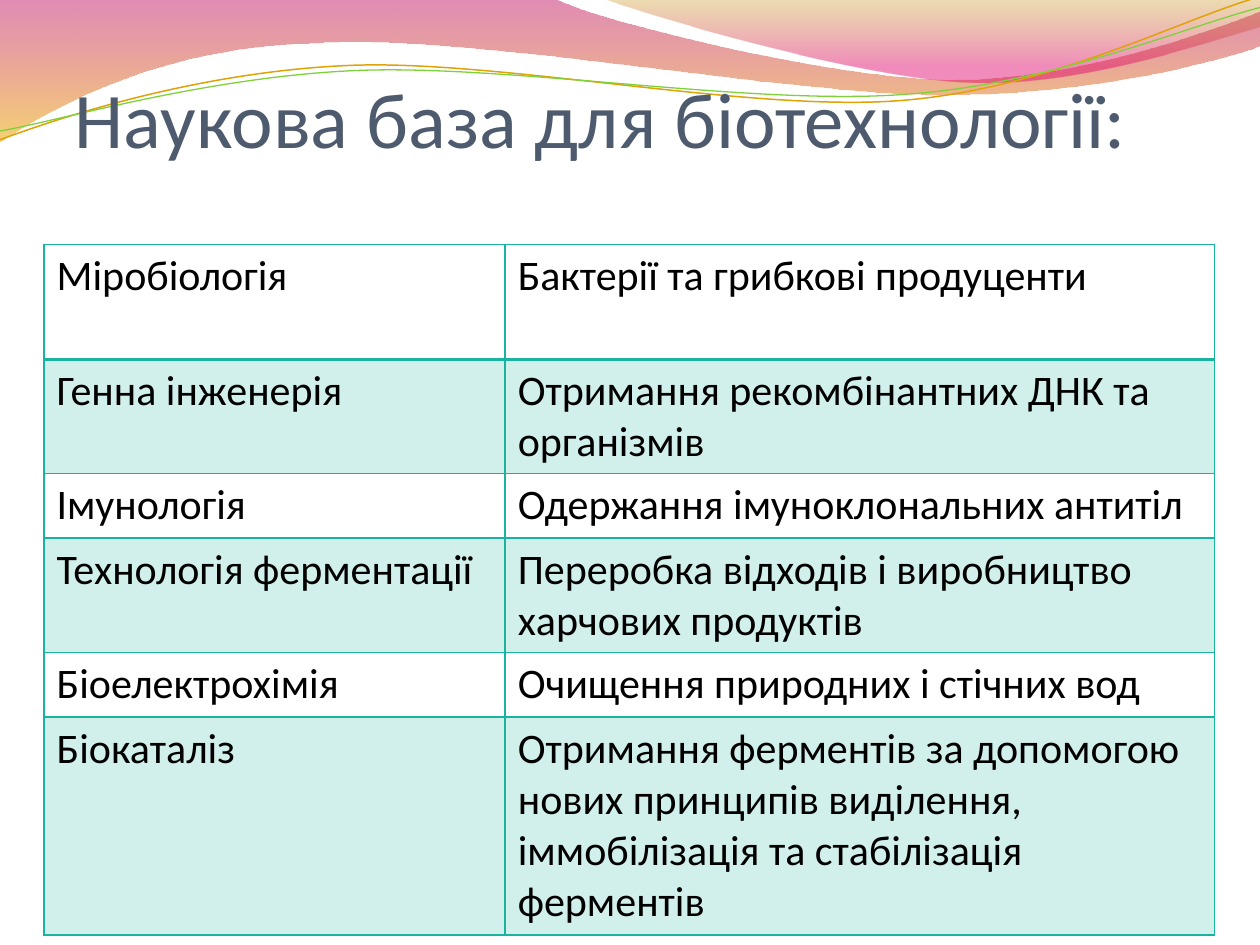
from lxml.etree import SubElement
from pptx import Presentation
from pptx.dml.color import RGBColor
from pptx.enum.text import MSO_ANCHOR
from pptx.oxml import parse_xml
from pptx.oxml.ns import nsdecls, qn
from pptx.util import Inches, Pt

COLORS = {
    "title": "4E5B6F", "text": "000000", "teal": "1AB39F",
    "rose": "BD0059", "amber": "F0AB00", "ochre": "C38B00", "pink": "E1006B",
    "gold": "E0A209", "green": "7FD13B",
}
FONT = "Calibri"
ROWS = [
    ("Міробіологія", "Бактерії та грибкові продуценти"),
    ("Генна інженерія", "Отримання рекомбінантних ДНК та організмів"),
    ("Імунологія", "Одержання імуноклональних антитіл"),
    ("Технологія ферментації", "Переробка відходів і виробництво харчових продуктів"),
    ("Біоелектрохімія", "Очищення природних і стічних вод"),
    ("Біокаталіз", "Отримання ферментів за допомогою нових принципів виділення, "
                   "іммобілізація та стабілізація ферментів"),
]
COL_WIDTHS = [3.66, 5.63]
ROW_HEIGHTS = [0.91, 0.91, 0.51, 0.91, 0.51, 1.73]

# Each outline is a start point, then steps: 2 numbers for a line, 6 for a Bézier curve.
WIDE_WAVE = [
    (0, 0), (4.4, -0.01), (4.76, 0.17, 6.64, 0.63, 7.58, 0.63),
    (8.53, 0.63, 9.58, 0.26, 10, 0.09), (10.01, 0.36),
    (9.83, 0.44, 8.7, 0.76, 7.46, 0.75), (6.22, 0.75, 3.82, 0.28, 2.57, 0.34),
    (1.29, 0.36, 0.46, 0.83, -0.01, 1.13),
]
RIGHT_WAVE = [
    (4.79, -0.01), (5.09, 0.11, 6.82, 0.62, 7.69, 0.65),
    (8.56, 0.69, 9.61, 0.32, 10, 0.21), (10, 0),
]
GOLD_LINE = [
    (0, 1.11), (0.48, 0.93, 1.58, 0.57, 2.77, 0.52),
    (3.95, 0.47, 5.93, 0.89, 7.13, 0.8), (8.33, 0.71, 9.38, 0.15, 9.98, -0.02),
]
GREEN_LINE = [
    (0, 1.04), (0.47, 0.96, 1.64, 0.61, 2.83, 0.56),
    (4.03, 0.51, 5.97, 0.84, 7.17, 0.75), (8.36, 0.67, 9.41, 0.21, 10, 0.06),
]


def rgb(name):
    return RGBColor.from_string(COLORS[name])


def style_run(r, size, color):
    r.font.name, r.font.size = FONT, Pt(size)
    r.font.color.rgb = rgb(color)


def add_outline(s, x, y, outline, close):
    """Build a freeform through the end points, then bend its curved segments."""
    points = [(Inches(x + step[-2]), Inches(y + step[-1])) for step in outline]
    builder = s.shapes.build_freeform(*points[0])
    builder.add_line_segments(points[1:], close=close)
    sp = builder.convert_to_shape()
    sp.shadow.inherit = False
    segments = list(sp._element.iter(qn("a:lnTo")))
    for segment, step in zip(segments, outline[1:]):
        if len(step) == 6:
            segment.tag  # the end point stays; two control points go before it
            curve = parse_xml(f'<a:cubicBezTo {nsdecls("a")}/>')
            for cx, cy in (step[:2], step[2:4], step[4:]):
                SubElement(curve, qn("a:pt"), x=str(Inches(x + cx) - sp.left),
                           y=str(Inches(y + cy) - sp.top))
            segment.getparent().replace(segment, curve)
    return sp


def add_wave(s, x, y, outline, stops):
    """Add a filled wave; stops are (position %, colour, opacity %), top to bottom."""
    sp = add_outline(s, x, y, outline, True)
    sp.line.fill.background()
    gs = "".join(
        f'<a:gs pos="{pos * 1000}"><a:srgbClr val="{COLORS[color]}">'
        f'<a:alpha val="{alpha * 1000}"/></a:srgbClr></a:gs>'
        for pos, color, alpha in stops)
    grad = parse_xml(f'<a:gradFill {nsdecls("a")}><a:gsLst>{gs}</a:gsLst>'
                     '<a:lin ang="5400000" scaled="0"/></a:gradFill>')
    sp._element.spPr.find(qn("a:custGeom")).addnext(grad)


def add_thin_curve(s, x, y, outline, color, width):
    sp = add_outline(s, x, y, outline, False)
    sp.fill.background()
    sp.line.color.rgb, sp.line.width = rgb(color), Pt(width)


def add_header(s, x, y):
    add_wave(s, x, y, WIDE_WAVE, [(0, "rose", 45), (100, "amber", 55)])
    add_wave(s, x, y, RIGHT_WAVE, [(0, "ochre", 30), (80, "pink", 45)])
    add_thin_curve(s, x, y, GOLD_LINE, "gold", 0.85)
    add_thin_curve(s, x, y, GREEN_LINE, "green", 0.75)


def add_title(s, x, y, w, h):
    tf = s.shapes.add_textbox(Inches(x), Inches(y), Inches(w), Inches(h)).text_frame
    tf.word_wrap, tf.vertical_anchor = True, MSO_ANCHOR.BOTTOM
    tf.margin_left = tf.margin_right = tf.margin_bottom = 0
    tf.text = "Наукова база для біотехнології:"
    style_run(tf.paragraphs[0].runs[0], 45, "title")


def set_borders(cell, widths):
    """Draw the borders; widths maps L, R, T and B to points."""
    tcPr = cell._tc.get_or_add_tcPr()
    for i, side in enumerate("LRTB"):
        ln = SubElement(tcPr, qn(f"a:ln{side}"), w=str(Pt(widths[side])))
        SubElement(SubElement(ln, qn("a:solidFill")), qn("a:srgbClr"), val=COLORS["teal"])
        tcPr.insert(i, ln)


def add_science_table(s, x, y, w, h):
    table = s.shapes.add_table(len(ROWS), len(COL_WIDTHS), Inches(x), Inches(y),
                               Inches(w), Inches(h)).table
    table.first_row = table.horz_banding = False
    for col, width in zip(table.columns, COL_WIDTHS):
        col.width = Inches(width)
    for i, (row, height) in enumerate(zip(table.rows, ROW_HEIGHTS)):
        row.height = Inches(height)
        for cell, text in zip(row.cells, ROWS[i]):
            cell.text = text
            style_run(cell.text_frame.paragraphs[0].runs[0], 24, "text")
            set_borders(cell, {"L": 1, "R": 1, "T": 2 if i == 1 else 1,
                               "B": 2 if i == 0 else 1})
            if i % 2:
                cell.fill.solid()
                cell.fill.fore_color.rgb = rgb("teal")
                clr = cell._tc.tcPr.find(qn("a:solidFill")).find(qn("a:srgbClr"))
                SubElement(clr, qn("a:alpha"), val="20000")
            else:
                cell.fill.background()


def main():
    prs = Presentation()
    prs.slide_width, prs.slide_height = Inches(10), Inches(7.5)
    s = prs.slides.add_slide(prs.slide_layouts[6])
    add_header(s, 0, 0)
    add_title(s, 0.59, 0.45, 9, 0.85)
    add_science_table(s, 0.35, 1.94, sum(COL_WIDTHS), sum(ROW_HEIGHTS))
    prs.save("out.pptx")


if __name__ == "__main__":
    main()
